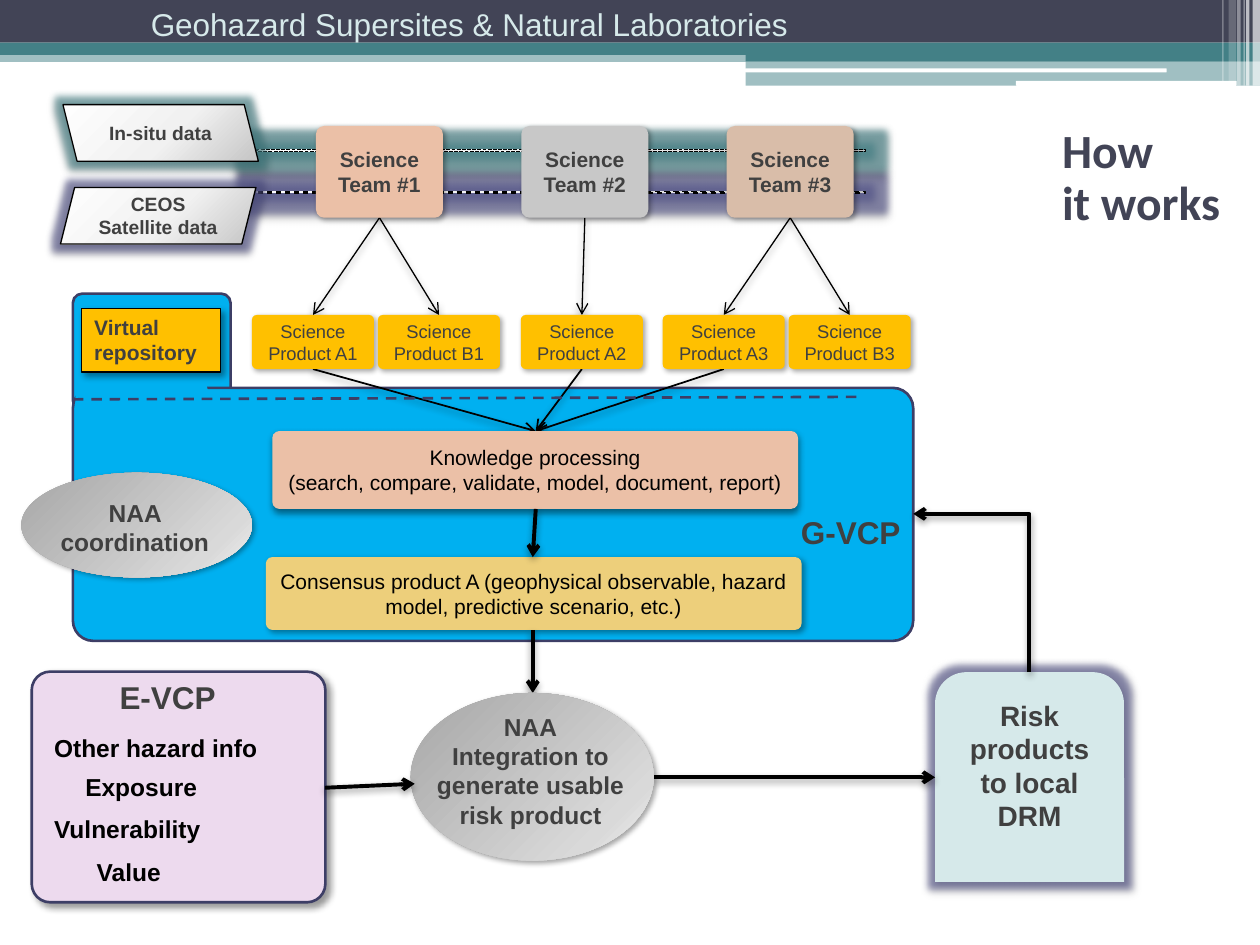
from lxml.etree import SubElement
from pptx import Presentation
from pptx.dml.color import RGBColor
from pptx.enum.dml import MSO_LINE_DASH_STYLE as DASH
from pptx.enum.shapes import MSO_CONNECTOR as CONN, MSO_SHAPE as SHAPE
from pptx.enum.text import MSO_ANCHOR as ANCHOR, PP_ALIGN as ALIGN
from pptx.oxml import parse_xml
from pptx.oxml.ns import nsdecls, qn
from pptx.util import Cm, Pt

BLACK = RGBColor(0, 0, 0)
WHITE = RGBColor(255, 255, 255)
INK = RGBColor(0x40, 0x40, 0x40)
SLATE = RGBColor(0x42, 0x44, 0x56)
TEAL = RGBColor(0x43, 0x80, 0x86)
MIST = RGBColor(0xD6, 0xE9, 0xEA)
PURPLE = RGBColor(0x53, 0x54, 0x8A)
NAVY = RGBColor(0x3D, 0x3E, 0x66)
LILAC = RGBColor(0xED, 0xDA, 0xEE)
SKY = RGBColor(0, 0xB0, 0xF0)
PEACH = RGBColor(0xEB, 0xC0, 0xA7)
SILVER = RGBColor(0xC8, 0xC8, 0xC8)
TAN = RGBColor(0xD9, 0xBD, 0xA9)
GOLD = RGBColor(0xFF, 0xC0, 0)
STRAW = RGBColor(0xED, 0xCF, 0x7B)

PALE_STOPS = ((0, "FEFEFE"), (55, "F1F1F1"), (100, "C5C5C5"))
GREY_STOPS = ((0, "A6A6A6"), (80, "D9D9D9"), (100, "F2F2F2"))
PALE = (PALE_STOPS, '<a:path path="circle"><a:fillToRect l="-40000" t="-90000" '
                    'r="140000" b="190000"/></a:path>')
GREY = (GREY_STOPS, '<a:lin ang="2700000" scaled="0"/>')

SOFT = (35, 3.1, 1.8, 45)
CAST = (40, 4, 3, 45)
DROP = (45, 4, 2, 90)
LOW = (38, 3.1, 1.6, 90)
LINE_SHADOW = (40, 4.1, 2, 90)


def add_alpha(parent, color, percent):
    """Append a partly transparent colour to an effect."""
    clr = SubElement(parent, qn("a:srgbClr"), val=str(color))
    SubElement(clr, qn("a:alpha"), val=str(percent * 1000))


def add_effects(effects, shadow=None, glow=None):
    """Fill an effect list with a glow and a shadow."""
    if glow:
        add_alpha(SubElement(effects, qn("a:glow"), rad=str(Pt(8))), glow, 60)
    if shadow:
        alpha, blur, dist, angle = shadow
        outer = SubElement(effects, qn("a:outerShdw"), blurRad=str(Pt(blur)),
                           dist=str(Pt(dist)), dir=str(angle * 60000), rotWithShape="0")
        add_alpha(outer, BLACK, alpha)


def set_fill(sp, fill, alpha=None):
    """Give a shape a solid or gradient fill."""
    spPr = sp.element.spPr
    if isinstance(fill, RGBColor):
        sp.fill.solid()
        sp.fill.fore_color.rgb = fill
        if alpha:
            clr = spPr.find(qn("a:solidFill"))[0]
            SubElement(clr, qn("a:alpha"), val=str(alpha * 1000))
        return
    stops, shade = fill
    sp.fill.gradient()
    marks = "".join(f'<a:gs pos="{pos * 1000}"><a:srgbClr val="{color}"/></a:gs>'
                    for pos, color in stops)
    grad = parse_xml(f'<a:gradFill {nsdecls("a")} rotWithShape="1">'
                     f'<a:gsLst>{marks}</a:gsLst>{shade}</a:gradFill>')
    spPr.replace(spPr.find(qn("a:gradFill")), grad)


def add_box(s, kind, box, fill, alpha=None, line=None, dash=None, adj=None,
            shadow=None, glow=None):
    """Add a preset shape; line is a colour and a width."""
    sp = s.shapes.add_shape(kind, *map(Cm, box))
    set_fill(sp, fill, alpha)
    if line:
        sp.line.color.rgb, sp.line.width = line[0], Pt(line[1])
        if dash:
            sp.line.dash_style = dash
    else:
        sp.line.fill.background()
    if adj is not None:
        sp.adjustments[0] = adj
    sp.shadow.inherit = False
    add_effects(sp.element.spPr.find(qn("a:effectLst")), shadow, glow)
    return sp


def write(sp, text, size, color=INK, bold=True, align=ALIGN.CENTER,
          anchor=ANCHOR.MIDDLE, font="Arial", wrap=True, spacing=None):
    """Write one paragraph per line of text into a shape."""
    tf = sp.text_frame
    tf.word_wrap = wrap
    tf.vertical_anchor = anchor
    for i, line in enumerate(text.split("\n")):
        p = tf.add_paragraph() if i else tf.paragraphs[0]
        p.text = line
        p.alignment = align
        if spacing:
            p.line_spacing = spacing
        p.font.name, p.font.size, p.font.bold = font, Pt(size), bold
        p.font.color.rgb = color


def add_text(s, box, text, size, anchor=ANCHOR.TOP, **style):
    """Add a text box."""
    write(s.shapes.add_textbox(*map(Cm, box)), text, size, anchor=anchor, **style)


def add_line(s, start, end, width, color=BLACK, arrow=True, dash=None, kind=CONN.STRAIGHT):
    """Add a connector, with an arrowhead at its end if wanted."""
    c = s.shapes.add_connector(kind, *map(Cm, start + end))
    c.line.color.rgb, c.line.width = color, Pt(width)
    if dash:
        c.line.dash_style = dash
    spPr = c._element.spPr
    if arrow:
        SubElement(spPr.find(qn("a:ln")), qn("a:tailEnd"), type="arrow")
    add_effects(SubElement(spPr, qn("a:effectLst")), LINE_SHADOW if arrow else None)
    return c


def add_elbow(s, start, end, width):
    """Add an arrow with one corner that leaves upwards and ends leftwards."""
    (x1, y1), (x2, y2) = start, end
    mx, my, dx, dy = (x1 + x2) / 2, (y1 + y2) / 2, (x1 - x2) / 2, (y1 - y2) / 2
    c = add_line(s, (mx - dy, my + dx), (mx + dy, my - dx), width, kind=CONN.ELBOW)
    spPr = c._element.spPr
    spPr.find(qn("a:prstGeom")).set("prst", "bentConnector2")
    spPr.find(qn("a:xfrm")).set("rot", str(270 * 60000))


def add_header(s):
    """Draw the bands, the stripes and the series title."""
    for box, color, alpha in (((0, 1.02, 25.4, 0.23), TEAL, 50), ((0, 0, 25.4, 0.86), SLATE, None),
                              ((0, 0.86, 25.4, 0.25), TEAL, None),
                              ((15.03, 0.99, 10.37, 0.24), TEAL, None),
                              ((15.03, 1.23, 10.37, 0.5), TEAL, 50)):
        add_box(s, SHAPE.RECTANGLE, box, color, alpha)
    for box in ((15.02, 1.38, 8.5, 0.08), (20.48, 1.63, 4.45, 0.1)):
        add_box(s, SHAPE.ROUNDED_RECTANGLE, box, WHITE)
    for x, width, height, alpha in ((25.25, 0.15, 1.73, 65), (25.12, 0.07, 1.73, 65),
                                    (25.07, 0.02, 1.73, 60), (24.94, 0.07, 1.73, 40),
                                    (24.77, 0.15, 1.63, 20), (24.64, 0.03, 1.63, 30)):
        add_box(s, SHAPE.RECTANGLE, (x, 0, width, height), WHITE, alpha)
    add_text(s, (2.79, -0.03, 13.8, 1.02), "Geohazard Supersites & Natural Laboratories", 18,
             color=MIST, bold=False, align=ALIGN.LEFT, wrap=False)
    add_text(s, (21.16, 2.34, 3.81, 2.54), "How\nit works", 27.2, anchor=ANCHOR.MIDDLE,
             color=SLATE, align=ALIGN.LEFT, font="Calibri", spacing=0.9)


def add_repository(s):
    """Draw the folder behind the processing steps and the data bars."""
    for box, line in (((1.47, 5.92, 3.18, 2.34), (NAVY, 1.5)),
                      ((1.47, 7.82, 16.94, 5.1), (NAVY, 1.5)), ((1.52, 7.67, 2.67, 2.34), None)):
        add_box(s, SHAPE.ROUNDED_RECTANGLE, box, SKY, line=line, adj=0.08)
    for y, dash, glow in ((3.86, DASH.DASH, PURPLE), (3.02, DASH.SQUARE_DOT, TEAL)):
        add_box(s, SHAPE.RECTANGLE, (5.18, y, 12.27, 0.03), PALE, line=(BLACK, 0.75),
                dash=dash, shadow=LOW, glow=glow)


def add_science(s):
    """Draw the teams, their products and the arrows between them."""
    hub = (10.8, 8.69)
    teams = ((7.65, PEACH, ((6.31, "A"), (8.85, "B"))), (11.79, SILVER, ((11.73, "A"),)),
             (15.93, TAN, ((14.59, "A"), (17.13, "B"))))
    for number, (x, color, products) in enumerate(teams, 1):
        add_line(s, (products[0][0], 7.44), hub, 1)
        for px, letter in products:
            add_line(s, (x, 4.39), (px, 6.35), 0.75)
            sp = add_box(s, SHAPE.ROUNDED_RECTANGLE, (px - 1.23, 6.35, 2.46, 1.09), GOLD,
                         adj=0.09, shadow=SOFT)
            write(sp, f"Science Product {letter}{number}", 10.5, bold=False)
        sp = add_box(s, SHAPE.ROUNDED_RECTANGLE, (x - 1.28, 2.54, 2.56, 1.85), color,
                     adj=0.09, shadow=SOFT)
        write(sp, f"Science Team #{number}", 12)


def add_processing(s):
    """Draw the processing boxes, the folder label and the input data."""
    for box, color, shadow, text in (
            ((5.49, 8.69, 10.6, 1.57), PEACH, DROP,
             "Knowledge processing\n(search, compare, validate, model, document, report)"),
            ((5.36, 11.23, 10.8, 1.47), STRAW, SOFT,
             "Consensus product A (geophysical observable, hazard model, "
             "predictive scenario, etc.)")):
        sp = add_box(s, SHAPE.ROUNDED_RECTANGLE, box, color, adj=0.09, shadow=shadow)
        write(sp, text, 12, color=BLACK, bold=False)
    sp = add_box(s, SHAPE.RECTANGLE, (1.65, 6.22, 2.79, 1.28), GOLD, line=(BLACK, 0.75),
                 shadow=CAST)
    write(sp, "Virtual\nrepository", 12, align=ALIGN.LEFT, anchor=ANCHOR.TOP)
    add_line(s, (1.47, 8.05), (17.35, 8), 1.5, color=NAVY, arrow=False, dash=DASH.DASH)
    for x, y, text, glow in ((1.22, 3.78, "CEOS Satellite data", PURPLE),
                             (1.27, 2.11, "In-situ data", TEAL)):
        sp = add_box(s, SHAPE.PARALLELOGRAM, (x, y, 3.94, 1.14), PALE, line=(BLACK, 0.75),
                     shadow=LOW, glow=glow)
        write(sp, text, 11)
        if glow == TEAL:
            sp.element.spPr.find(qn("a:xfrm")).set("flipH", "1")


def add_outcome(s):
    """Draw the hazard panel, the integration step and the risk products."""
    sp = add_box(s, SHAPE.ROUND_2_SAME_RECTANGLE, (18.85, 13.55, 3.81, 4.23), MIST,
                 shadow=SOFT, glow=PURPLE)
    write(sp, "Risk products to local DRM", 16)
    sp.text_frame.margin_bottom = Cm(0.78)
    for x, y, width, text in ((1.47, 15.44, 2.77, "Exposure"), (0.84, 16.28, 3.48, "Vulnerability"),
                              (1.7, 17.15, 1.8, "Value"), (0.84, 14.66, 5.08, "Other hazard info")):
        add_text(s, (x, y, width, 0.86), text, 14, color=BLACK, align=ALIGN.LEFT, wrap=False)
    for start, end in (((10.8, 10.26), (10.74, 11.23)), ((10.74, 12.7), (10.74, 13.97)),
                       ((13.18, 15.67), (18.85, 15.67))):
        add_line(s, start, end, 2.25)
    for oval, box, text in (
            ((8.28, 13.97, 4.9, 3.38), (8.36, 14.22, 4.67, 3.18),
             "NAA\nIntegration to generate usable risk product"),
            ((0.43, 9.53, 4.65, 2.11), (0.56, 9.91, 4.32, 1.63), "NAA coordination")):
        add_box(s, SHAPE.OVAL, oval, GREY, shadow=SOFT)
        add_text(s, box, text, 14)
    add_line(s, (6.55, 15.88), (8.36, 15.8), 2.25)
    add_elbow(s, (20.75, 13.55), (18.41, 10.36), 2.25)
    for x, y, text in ((15.88, 10.21, "G-VCP"), (2.11, 13.54, "E-VCP")):
        add_text(s, (x, y, 2.54, 1.02), text, 18)


def main():
    """Build the slide and save it."""
    prs = Presentation()
    prs.slide_width, prs.slide_height = Cm(25.4), Cm(19.05)
    s = prs.slides.add_slide(prs.slide_layouts[6])
    add_header(s)
    add_box(s, SHAPE.ROUNDED_RECTANGLE, (0.64, 13.54, 5.92, 4.65), LILAC,
            line=(NAVY, 1.5), adj=0.08, shadow=CAST)
    add_repository(s)
    add_science(s)
    add_processing(s)
    add_outcome(s)
    prs.save("out.pptx")


if __name__ == "__main__":
    main()
